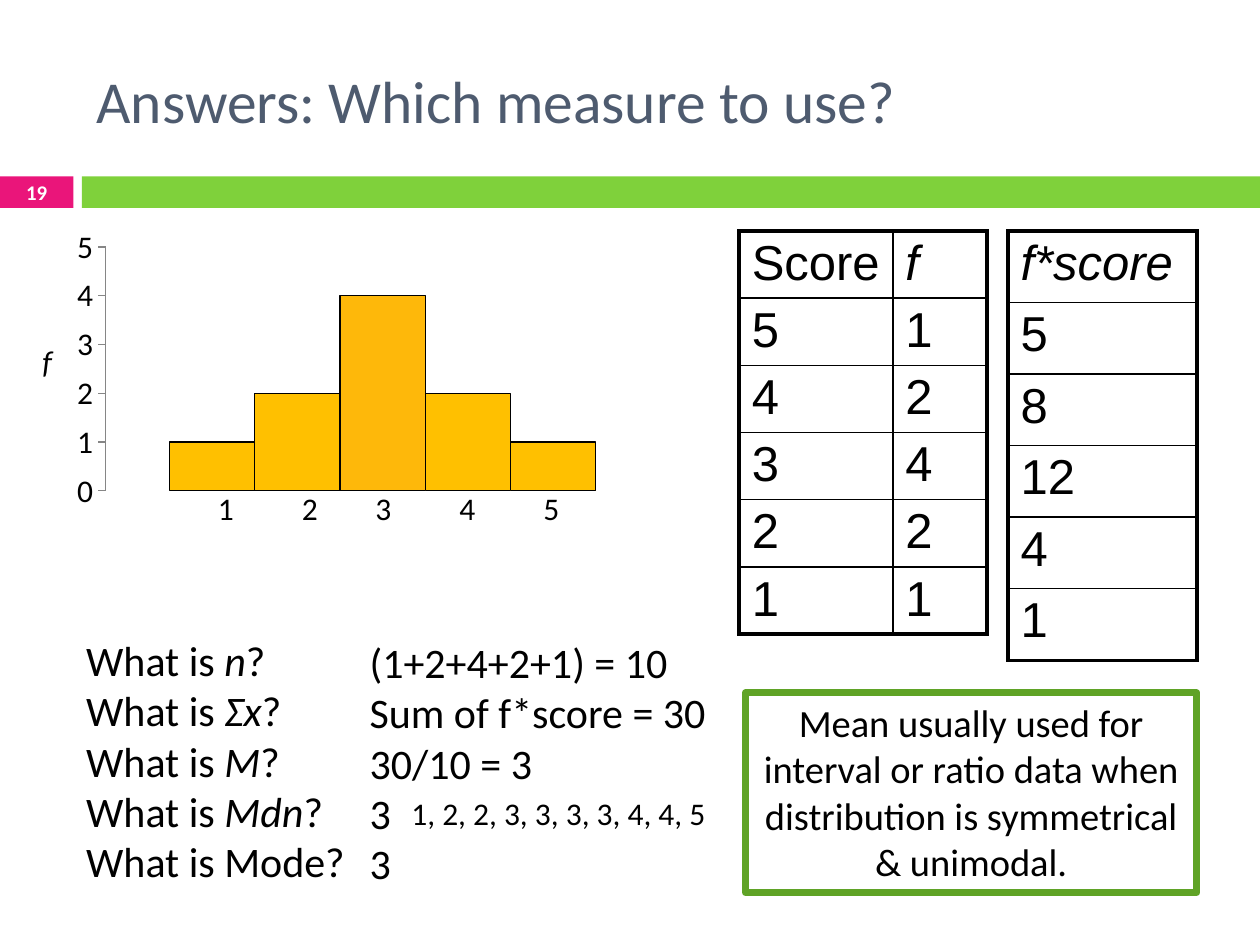
from dataclasses import dataclass
from typing import NamedTuple

from lxml.etree import SubElement
from pptx import Presentation
from pptx.chart.data import CategoryChartData
from pptx.dml.color import RGBColor
from pptx.enum.chart import XL_CHART_TYPE as ChartType, XL_TICK_MARK as Tick
from pptx.enum.shapes import MSO_SHAPE as Shape
from pptx.enum.text import MSO_ANCHOR as Anchor, MSO_AUTO_SIZE as AutoSize, PP_ALIGN as Align
from pptx.oxml import parse_xml
from pptx.oxml.ns import nsdecls, qn
from pptx.util import Inches, Pt

COLS, ROWS = 120, 90
WIDTH, HEIGHT = Inches(10), Inches(7.5)
BLACK = "000000"


class Box(NamedTuple):
    col: float
    row: float
    cols: float
    rows: float

    def emu(self) -> list[int]:
        cw, rh = WIDTH / COLS, HEIGHT / ROWS
        return [round(v) for v in (self.col * cw, self.row * rh, self.cols * cw, self.rows * rh)]


class Run(NamedTuple):
    text: str
    italic: bool = False


@dataclass
class Style:
    size: float
    color: str = BLACK
    font: str = "Calibri"
    bold: bool = False
    align: Align = Align.LEFT
    anchor: Anchor = Anchor.TOP


@dataclass
class Grid:
    box: Box
    widths: list[float]
    rows: list[list[Run]]


def rgb(hex_color: str) -> RGBColor:
    return RGBColor.from_string(hex_color)


def write(tf, lines: list[list[Run]], style: Style) -> None:
    tf.word_wrap = True
    tf.auto_size = AutoSize.NONE
    tf.vertical_anchor = style.anchor
    for i, runs in enumerate(lines):
        p = tf.add_paragraph() if i else tf.paragraphs[0]
        p.alignment = style.align
        p.space_before = Pt(0)
        for run in runs:
            r = p.add_run()
            r.text = run.text
            f = r.font
            f.size, f.name, f.bold, f.italic = Pt(style.size), style.font, style.bold, run.italic
            f.color.rgb = rgb(style.color)


def add_text(s, box: Box, lines: list[list[Run]], style: Style) -> None:
    write(s.shapes.add_textbox(*box.emu()).text_frame, lines, style)


def fill_placeholder(sp, box: Box, lines: list[list[Run]], style: Style) -> None:
    sp.left, sp.top, sp.width, sp.height = box.emu()
    write(sp.text_frame, lines, style)


def remove_bullets(sp) -> None:
    for p in sp.text_frame.paragraphs:
        pr = p._p.get_or_add_pPr()
        pr.set("marL", "0")
        pr.set("indent", "0")
        SubElement(pr, qn("a:buNone"))


def add_rect(s, box: Box, fill: str | None = None, line: str | None = None, width: float = 0):
    sp = s.shapes.add_shape(Shape.RECTANGLE, *box.emu())
    sp.shadow.inherit = False
    if fill:
        sp.fill.solid()
        sp.fill.fore_color.rgb = rgb(fill)
    else:
        sp.fill.background()
    if line:
        sp.line.color.rgb = rgb(line)
        sp.line.width = Pt(width)
    else:
        sp.line.fill.background()
    return sp


def border(cell, side: str, width: float) -> None:
    cell._tc.get_or_add_tcPr().append(parse_xml(
        f'<a:{side} {nsdecls("a")} w="{Pt(width)}"><a:solidFill>'
        f'<a:srgbClr val="{BLACK}"/></a:solidFill></a:{side}>'))


def add_grid(s, grid: Grid) -> None:
    last_row, last_col = len(grid.rows) - 1, len(grid.widths) - 1
    table = s.shapes.add_table(last_row + 1, last_col + 1, *grid.box.emu()).table
    table.first_row = table.horz_banding = False
    for column, share in zip(table.columns, grid.widths):
        column.width = round(grid.box.emu()[2] * share)
    for i, runs in enumerate(grid.rows):
        for j, run in enumerate(runs):
            cell = table.cell(i, j)
            cell.margin_top = cell.margin_bottom = Inches(0.04)
            write(cell.text_frame, [[run]], Style(28, font="Arial"))
            edges = {"lnL": j == 0, "lnR": j == last_col, "lnT": i == 0, "lnB": i == last_row}
            for side, outer in edges.items():
                border(cell, side, 2.25 if outer else 1)
            cell.fill.background()


def add_histogram(s, box: Box, values: list[int]) -> None:
    data = CategoryChartData()
    data.categories = ["1"]
    for i, value in enumerate(values, 1):
        data.add_series(f"Series {i}", [value])
    chart = s.shapes.add_chart(ChartType.COLUMN_CLUSTERED, *box.emu(), data).chart
    chart.has_legend = chart.has_title = False
    f = chart.font
    f.size, f.name, f.color.rgb = Pt(18), "Calibri", rgb(BLACK)
    chart.category_axis.visible = False
    axis = chart.value_axis
    axis.minimum_scale, axis.maximum_scale, axis.major_unit = 0, 5, 1
    axis.has_major_gridlines = False
    axis.major_tick_mark = Tick.OUTSIDE
    axis.format.line.color.rgb = rgb("868686")
    plot = chart.plots[0]
    plot.gap_width, plot.overlap, plot.vary_by_categories = 150, 0, False
    for series, value in zip(plot.series, values):
        series.format.fill.solid()
        series.format.fill.fore_color.rgb = rgb("FEB80A" if value == max(values) else "FFC000")
        series.format.line.color.rgb = rgb(BLACK)
        series.format.line.width = Pt(0.75)
    area = chart._chartSpace.chart.plotArea
    for old in area.findall(qn("c:layout")):
        area.remove(old)
    area.insert(0, parse_xml(
        f'<c:layout {nsdecls("c")}><c:manualLayout><c:layoutTarget val="inner"/>'
        '<c:xMode val="edge"/><c:yMode val="edge"/><c:x val="0.07"/><c:y val="0.09"/>'
        '<c:w val="0.91"/><c:h val="0.83"/></c:manualLayout></c:layout>'))


def main() -> None:
    prs = Presentation()
    prs.slide_width, prs.slide_height = WIDTH, HEIGHT
    s = prs.slides.add_slide(prs.slide_layouts[3])
    title, questions, answers = s.placeholders

    page = add_rect(s, Box(0, 16.8, 7, 3), "EA157A")
    tf = page.text_frame
    tf.margin_left = tf.margin_right = 0
    write(tf, [[Run("19")]],
          Style(11.9, "FFFFFF", bold=True, align=Align.CENTER, anchor=Anchor.MIDDLE))
    add_rect(s, Box(7.8, 16.8, 112.2, 3), "7FD13B")
    fill_placeholder(title, Box(8, 3, 107, 13), [[Run("Answers: Which measure to use?")]],
                     Style(34, "4E5B6F", anchor=Anchor.MIDDLE))

    symbols = ["n", "Σx", "M", "Mdn"]
    asked = [[Run("What is "), Run(symbol, True), Run("?")] for symbol in symbols]
    asked.append([Run("What is Mode?")])
    fill_placeholder(questions, Box(7, 59.8, 28, 25.4), asked, Style(24))
    results = ["(1+2+4+2+1) = 10", "Sum of f*score = 30", "30/10 = 3", "3", "3"]
    fill_placeholder(answers, Box(34, 60, 36, 25.4), [[Run(t)] for t in results], Style(24))
    for sp in (questions, answers):
        remove_bullets(sp)
    add_text(s, Box(38, 75, 34, 4.8), [[Run("1, 2, 2, 3, 3, 3, 3, 4, 4, 5")]], Style(18))

    counts = [1, 2, 4, 2, 1]
    scores = [5, 4, 3, 2, 1]
    frequency = [[Run("Score"), Run("f", True)]]
    frequency += [[Run(str(score)), Run(str(n))] for score, n in zip(scores, counts)]
    products = [[Run("f*score", True)]] + [[Run(t)] for t in ("5", "8", "12", "4", "1")]
    add_grid(s, Grid(Box(70.4, 22, 23.6, 38.4), [0.62, 0.38], frequency))
    add_grid(s, Grid(Box(96, 22, 18, 40.9), [1], products))

    note = add_rect(s, Box(71, 66, 43, 19), line="5FA326", width=4)
    write(note.text_frame, [[Run("Mean usually used for interval or ratio data when "
                                 "distribution is symmetrical & unimodal.")]],
          Style(22, align=Align.CENTER))

    add_histogram(s, Box(6, 21, 58, 28), counts)
    centered = Style(18, align=Align.CENTER)
    for i, col in enumerate((17, 25, 32, 40, 48), 1):
        add_text(s, Box(col, 46, 9, 5), [[Run(str(i))]], centered)
    add_text(s, Box(0, 32, 9, 5), [[Run("f", True)]], centered)

    prs.save("out.pptx")


if __name__ == "__main__":
    main()
